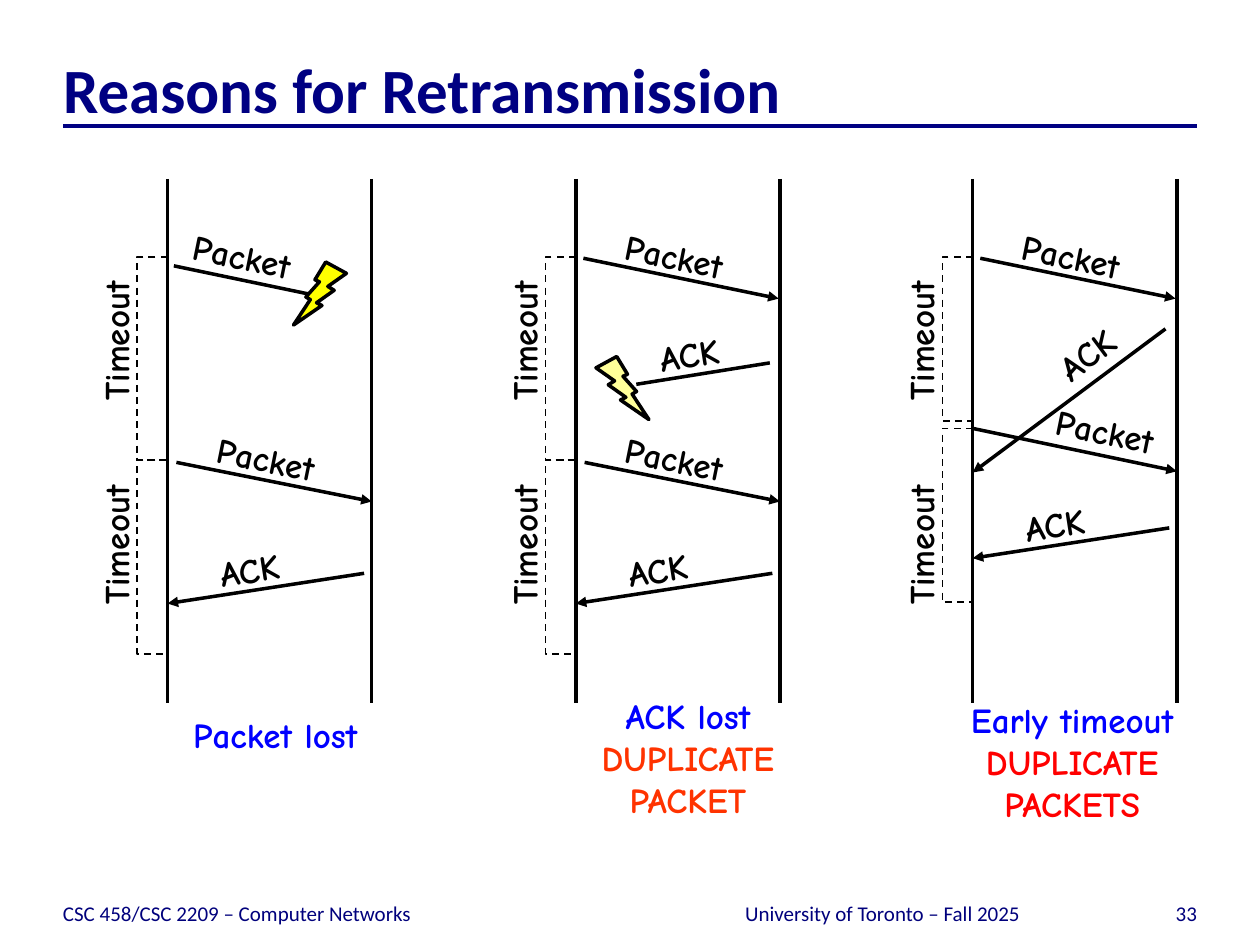
from pptx import Presentation
from pptx.dml.color import RGBColor
from pptx.enum import dml, shapes, text
from pptx.oxml.ns import qn
from pptx.util import Inches, Pt
from lxml import etree

THEME = {
    "heading": "000082", "footer": "00007C", "ink": "000000",
    "cause": "0000FF", "orange": "FF3300", "red": "FF0000",
    "bolt": "FFFF00", "pale_bolt": "FFFF99",
    "title_font": "Calibri", "label_font": "Comic Neue",
    "title_size": 36, "label_size": 20, "footer_size": 12,
    "rule": 2.25, "stroke": 2, "dash": 1,
}

TITLE = "Reasons for Retransmission"
FOOTERS = [
    ("CSC 458/CSC 2209 – Computer Networks", (0.5, 6.95, 4.83, 0.4), "LEFT"),
    ("University of Toronto – Fall 2025", (5.42, 6.95, 3.17, 0.4), "CENTER"),
    ("33", (8.67, 6.95, 0.83, 0.4), "RIGHT"),
]

LABEL_WIDTH = {"Packet": 1.04, "ACK": 0.8}
LABEL_HEIGHT = 0.44
DOWN, UP, STEEP = 11.5, 351.2, 323.4
TIMELINE_TOP, TIMELINE_BOTTOM, LANE_WIDTH = 1.42, 5.58, 1.62
BRACKET_DEPTH = 0.24
TIMEOUT_OFFSET, TIMEOUT_SIZE, TIMEOUT_TOPS = -1.08, (1.33, 0.43), (2.49, 4.11)

# message: text, start, end, arrives, label corner, label angle (x from the sender)
FIRST_SEND = ("Packet", (0.06, 2.05), (1.61, 2.37), True, (0.26, 1.81), DOWN)
RETRY = [
    ("Packet", (0.07, 3.67), (1.62, 3.98), True, (0.26, 3.42), DOWN),
    ("ACK", (1.56, 4.55), (0, 4.79), True, (0.25, 4.3), UP),
]
FULL_TIMEOUTS = [(2.04, 3.65), (3.65, 5.19)]

SCENARIOS = [
    {
        "sender": 1.33, "timeouts": FULL_TIMEOUTS,
        "messages": [("Packet", (0.05, 2.11), (1.2, 2.35), False, (0.07, 1.81), DOWN), *RETRY],
        "loss": (1.0, 2.08, "bolt", True),
        "caption": [("Packet lost", "cause")], "caption_box": (1.41, 5.61, 1.55, 0.44),
    },
    {
        "sender": 4.57, "timeouts": FULL_TIMEOUTS,
        "messages": [FIRST_SEND,
                     ("ACK", (1.54, 2.88), (0.48, 3.05), False, (0.5, 2.59), UP), *RETRY],
        "loss": (0.16, 2.83, "pale_bolt", False),
        "caption": [("ACK lost", "cause"), ("DUPLICATE\nPACKET", "orange")],
        "caption_box": (4.52, 5.46, 1.88, 1.11),
    },
    {
        "sender": 7.72, "timeouts": [(2.04, 3.34), (3.4, 4.78)],
        "messages": [FIRST_SEND,
                     ("ACK", (1.53, 2.61), (0, 3.75), True, (0.51, 2.59), STEEP),
                     ("Packet", (0, 3.4), (1.62, 3.74), True, (0.53, 3.2), DOWN),
                     ("ACK", (1.56, 4.19), (0, 4.43), True, (0.25, 3.94), UP)],
        "loss": None,
        "caption": [("Early timeout", "cause"), ("DUPLICATE\nPACKETS", "red")],
        "caption_box": (7.6, 5.49, 1.82, 1.11),
    },
]


def colour(name):
    return RGBColor.from_string(THEME[name])


def write(frame, paragraphs, align, font, size, bold):
    for i, (words, ink) in enumerate(paragraphs):
        para = frame.paragraphs[0] if i == 0 else frame.add_paragraph()
        para.alignment = getattr(text.PP_ALIGN, align)
        for j, line in enumerate(words.split("\n")):
            if j:
                para.add_line_break()
            run = para.add_run()
            run.text = line
            run.font.name = THEME[font]
            run.font.size = Pt(THEME[size])
            run.font.bold = bold
            run.font.color.rgb = colour(ink)


def no_insets(frame, top=0):
    frame.margin_left = frame.margin_right = frame.margin_bottom = 0
    frame.margin_top = Inches(top)
    frame.vertical_anchor = text.MSO_ANCHOR.BOTTOM
    frame.word_wrap = True


def add_label(slide, paragraphs, box, angle=0, wrap=False):
    label = slide.shapes.add_textbox(*map(Inches, box))
    label.rotation = angle
    frame = label.text_frame
    frame.word_wrap = wrap
    frame.auto_size = text.MSO_AUTO_SIZE.SHAPE_TO_FIT_TEXT
    frame.vertical_anchor = text.MSO_ANCHOR.MIDDLE
    write(frame, paragraphs, "CENTER", "label_font", "label_size", True)


def add_line(slide, start, end, ink="ink", width="stroke", arrow=False):
    line = slide.shapes.add_connector(
        shapes.MSO_CONNECTOR.STRAIGHT, *map(Inches, (*start, *end)))
    line.line.color.rgb = colour(ink)
    line.line.width = Pt(THEME[width])
    if arrow:
        etree.SubElement(line.line._get_or_add_ln(), qn("a:tailEnd"), type="triangle")
    etree.SubElement(line.element.spPr, qn("a:effectLst"))


def add_bracket(slide, x, top, bottom):
    left = x - BRACKET_DEPTH
    outline = slide.shapes.build_freeform(Inches(x), Inches(top))
    outline.add_line_segments(
        [(Inches(a), Inches(b)) for a, b in ((left, top), (left, bottom), (x, bottom))],
        close=False)
    bracket = outline.convert_to_shape()
    bracket.shadow.inherit = False
    bracket.fill.background()
    bracket.line.color.rgb = colour("ink")
    bracket.line.width = Pt(THEME["dash"])
    bracket.line.dash_style = dml.MSO_LINE.DASH


def add_loss(slide, x, y, fill, mirrored):
    bolt = slide.shapes.add_shape(
        shapes.MSO_SHAPE.LIGHTNING_BOLT, *map(Inches, (x, y, 0.42, 0.5)))
    bolt.shadow.inherit = False
    bolt.fill.solid()
    bolt.fill.fore_color.rgb = colour(fill)
    bolt.line.color.rgb = colour("ink")
    bolt.line.width = Pt(THEME["stroke"])
    if mirrored:
        bolt.element.spPr.find(qn("a:xfrm")).set("flipH", "1")


def add_scenario(slide, scenario):
    x = scenario["sender"]
    for (top, bottom), label_top in zip(scenario["timeouts"], TIMEOUT_TOPS):
        add_bracket(slide, x, top, bottom)
        add_label(slide, [("Timeout", "ink")],
                  (x + TIMEOUT_OFFSET, label_top, *TIMEOUT_SIZE), 270, True)
    for words, start, end, arrives, corner, angle in scenario["messages"]:
        add_line(slide, (x + start[0], start[1]), (x + end[0], end[1]), arrow=arrives)
        add_label(slide, [(words, "ink")],
                  (x + corner[0], corner[1], LABEL_WIDTH[words], LABEL_HEIGHT), angle)
    for host in (x, x + LANE_WIDTH):
        add_line(slide, (host, TIMELINE_TOP), (host, TIMELINE_BOTTOM))
    if scenario["loss"]:
        dx, *rest = scenario["loss"]
        add_loss(slide, x + dx, *rest)
    add_label(slide, scenario["caption"], scenario["caption_box"])


def main():
    deck = Presentation()
    deck.slide_width, deck.slide_height = Inches(10), Inches(7.5)
    slide = deck.slides.add_slide(deck.slide_layouts[5])

    heading = slide.shapes.title
    heading.left, heading.top, heading.width, heading.height = map(
        Inches, (0.5, 0.33, 9, 0.67))
    no_insets(heading.text_frame, 0.05)
    heading.text_frame.auto_size = text.MSO_AUTO_SIZE.NONE
    write(heading.text_frame, [(TITLE, "heading")], "LEFT", "title_font", "title_size", True)
    add_line(slide, (0.5, 1), (9.5, 1), "heading", "rule")

    for words, box, align in FOOTERS:
        footer = slide.shapes.add_textbox(*map(Inches, box))
        no_insets(footer.text_frame)
        write(footer.text_frame, [(words, "footer")], align, "title_font", "footer_size", False)

    for scenario in SCENARIOS:
        add_scenario(slide, scenario)
    deck.save("out.pptx")


if __name__ == "__main__":
    main()
